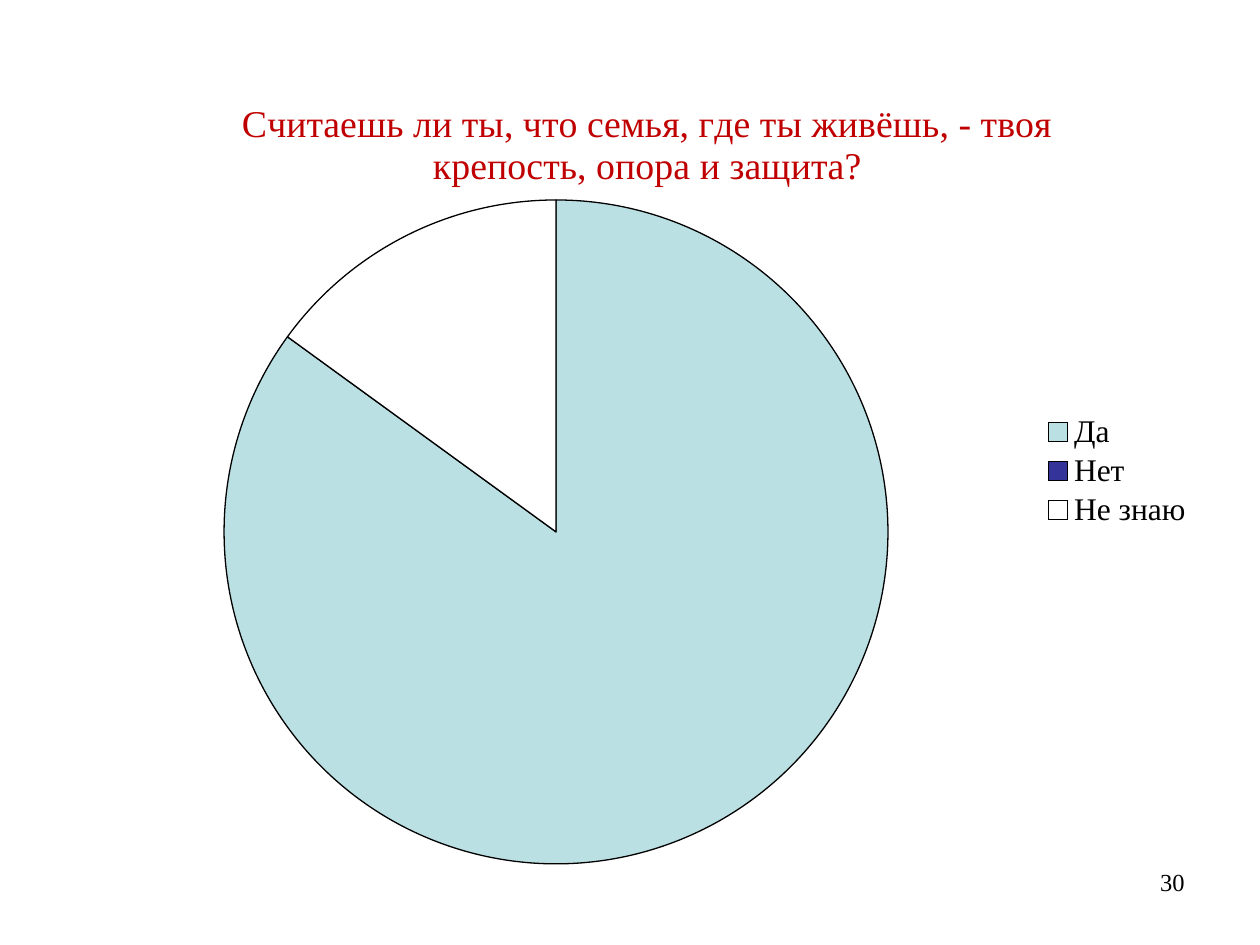
import lxml.etree
import pptx
import pptx.chart.data
import pptx.dml.color
import pptx.enum.chart
import pptx.enum.text
import pptx.oxml.ns
import pptx.util

PX = 914400 / 126
FONT = "Times New Roman"
CHART_BOX = (73, 63, 1134, 819)
ANSWERS = {"Да": (85, "BBE0E3"), "Нет": (0, "333399"), "Не знаю": (15, "FFFFFF")}
QUESTION = "Считаешь ли ты, что семья, где ты живёшь, - твоя крепость, опора и защита?"


def px(length):
    """Turn whole pixels into EMU."""
    return pptx.util.Emu(round(length * PX))


def color(value):
    """Turn a hex string into a colour."""
    return pptx.dml.color.RGBColor.from_string(value)


def style_font(font, size, value):
    """Set the typeface, size and colour of a font."""
    font.name = FONT
    font.size = pptx.util.Pt(size)
    font.bold = False
    font.color.rgb = color(value)


def place(element, before, left, top, width=None, height=None, inner=False):
    """Pin a chart part to slide pixels, ahead of the named sibling tags."""
    qn = pptx.oxml.ns.qn
    for old in element.findall(qn("c:layout")):
        element.remove(old)
    layout = lxml.etree.Element(qn("c:layout"))
    manual = lxml.etree.SubElement(layout, qn("c:manualLayout"))
    chart_left, chart_top, chart_width, chart_height = CHART_BOX
    settings = {"layoutTarget": "inner"} if inner else {}
    settings.update(xMode="edge", yMode="edge")
    settings["x"] = round((left - chart_left) / chart_width, 4)
    settings["y"] = round((top - chart_top) / chart_height, 4)
    if width:
        settings["w"] = round(width / chart_width, 4)
        settings["h"] = round(height / chart_height, 4)
    for name, value in settings.items():
        lxml.etree.SubElement(manual, qn("c:" + name)).set("val", str(value))
    follower = next(child for child in element if child.tag in [qn(tag) for tag in before])
    follower.addprevious(layout)


def add_pie(page):
    """Add the pie of answers with its title and legend."""
    data = pptx.chart.data.CategoryChartData()
    data.categories = list(ANSWERS)
    data.add_series("Series 1", [value for value, fill in ANSWERS.values()])
    kind = pptx.enum.chart.XL_CHART_TYPE.PIE
    chart = page.shapes.add_chart(kind, *map(px, CHART_BOX), data).chart
    style_font(chart.font, 18, "000000")

    title = chart.chart_title
    title.text_frame.text = QUESTION
    style_font(title.text_frame.paragraphs[0].runs[0].font, 21.6, "C00000")
    title.include_in_layout = False
    place(title._element, ["c:overlay"], 235, 92)

    chart.has_legend = True
    chart.legend.position = pptx.enum.chart.XL_LEGEND_POSITION.RIGHT
    chart.legend.include_in_layout = False
    style_font(chart.legend.font, 18, "000000")
    place(chart.legend._element, ["c:overlay"], 1042, 410, 150, 122)

    plot = chart.plots[0]
    plot.vary_by_categories = True
    place(plot._element.getparent(), ["c:pieChart"], 224, 200, 664, 664, inner=True)
    for index, (value, fill) in enumerate(ANSWERS.values()):
        slice_format = plot.series[0].points[index].format
        slice_format.fill.solid()
        slice_format.fill.fore_color.rgb = color(fill)
        slice_format.line.color.rgb = color("000000")
        slice_format.line.width = pptx.util.Pt(0.75)


def add_page_number(page, number):
    """Add the right-aligned page number."""
    box = page.shapes.add_textbox(px(903), px(861), px(294), px(66))
    box.text_frame.word_wrap = True
    box.text_frame.text = number
    para = box.text_frame.paragraphs[0]
    para.alignment = pptx.enum.text.PP_ALIGN.RIGHT
    style_font(para.runs[0].font, 14, "000000")


def main():
    """Build the slide and save it."""
    deck = pptx.Presentation()
    deck.slide_width, deck.slide_height = px(1260), px(945)
    page = deck.slides.add_slide(deck.slide_layouts[6])
    add_pie(page)
    add_page_number(page, "30")
    deck.save("out.pptx")


if __name__ == "__main__":
    main()
